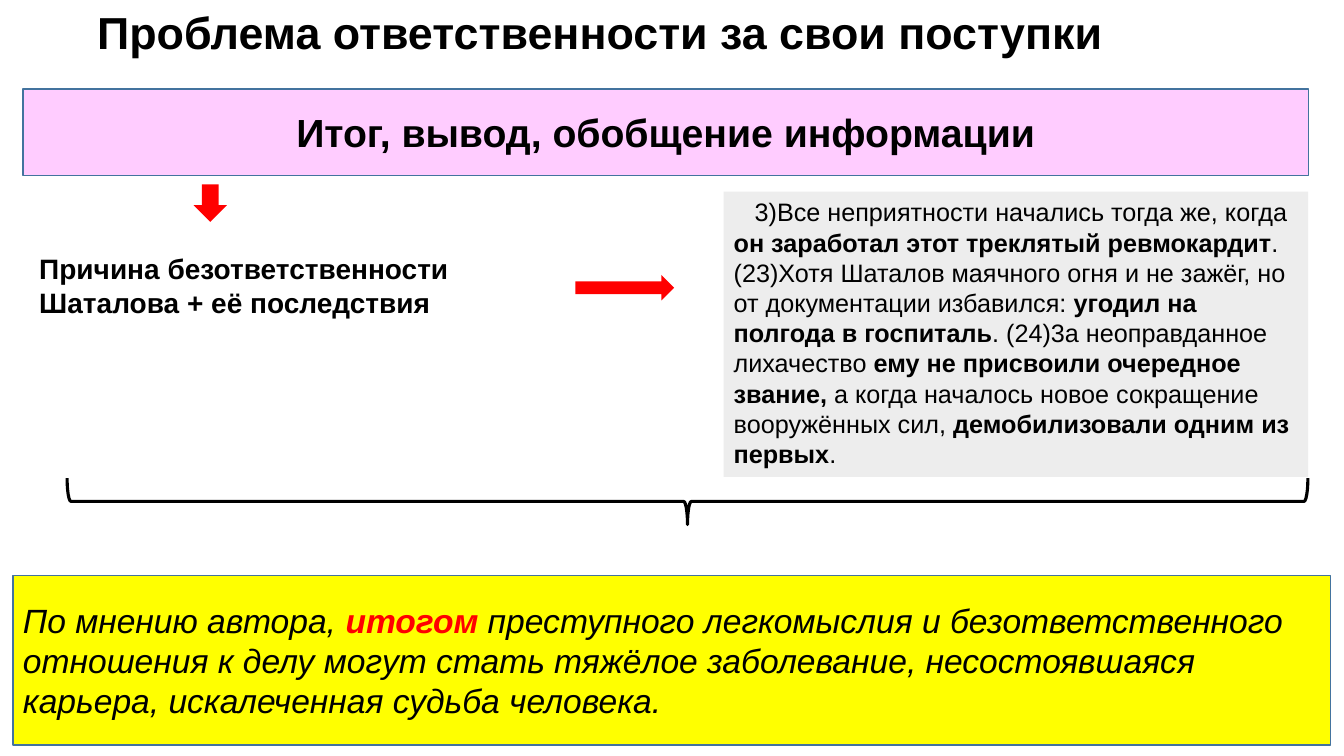
from pptx import Presentation
from pptx import util as u
from pptx.dml.color import RGBColor
from pptx.enum import shapes, text

BLACK = RGBColor(0x00, 0x00, 0x00)
RED = RGBColor(0xFF, 0x00, 0x00)
PINK = RGBColor(0xFF, 0xCC, 0xFF)
YELLOW = RGBColor(0xFF, 0xFF, 0x00)
GRAY = RGBColor(0xED, 0xED, 0xED)
BLUE = RGBColor(0x43, 0x73, 0x9E)
KIND = shapes.MSO_SHAPE
MIDDLE = text.MSO_ANCHOR.MIDDLE
TOP = text.MSO_ANCHOR.TOP
LEFT = text.PP_ALIGN.LEFT
CENTER = text.PP_ALIGN.CENTER


def add_figure(kind, box, fill=None, line=None, width=1):
    shape = slide.shapes.add_shape(kind, *map(u.Cm, box))
    shape.shadow.inherit = False
    if fill is None:
        shape.fill.background()
    else:
        shape.fill.solid()
        shape.fill.fore_color.rgb = fill
    if line is None:
        shape.line.fill.background()
    else:
        shape.line.color.rgb = line
        shape.line.width = u.Pt(width)
    return shape


def write(shape, runs, size, anchor=TOP, align=LEFT):
    frame = shape.text_frame
    frame.word_wrap = True
    frame.vertical_anchor = anchor
    paragraph = frame.paragraphs[0]
    paragraph.alignment = align
    for words, changes in runs:
        run = paragraph.add_run()
        run.text = words
        values = {"name": "Arial", "size": u.Pt(size), "bold": False, "italic": False}
        values.update(changes)
        run.font.color.rgb = values.pop("color", BLACK)
        for name, value in values.items():
            setattr(run.font, name, value)
    return paragraph


presentation = Presentation()
presentation.slide_width = u.Cm(33.87)
presentation.slide_height = u.Cm(19.05)
slide = presentation.slides.add_slide(presentation.slide_layouts[6])

bold = {"bold": True}
italic = {"italic": True}

title = slide.shapes.add_textbox(*map(u.Cm, (2.2, 0.08, 30.2, 1.42)))
write(title, [("Проблема ответственности за свои поступки", bold)], 32, MIDDLE)

heading = add_figure(KIND.RECTANGLE, (0.58, 2.24, 32.39, 2.18), PINK, BLUE)
write(heading, [("Итог, вывод, обобщение информации", bold)], 28, MIDDLE, CENTER)

add_figure(KIND.DOWN_ARROW, (4.88, 4.65, 0.84, 0.94), RED)

brace = add_figure(KIND.RIGHT_BRACE, (16.74, -3, 1.17, 31.27), line=BLACK, width=2.25)
brace.rotation = 90

conclusion = add_figure(KIND.RECTANGLE, (0.33, 14.5, 33.2, 4.27), YELLOW, BLUE)
write(conclusion, [
    ("По мнению автора, ", italic),
    ("итогом", {"italic": True, "bold": True, "color": RED}),
    (" преступного легкомыслия и безответственного отношения к делу могут стать "
     "тяжёлое заболевание, несостоявшаяся карьера, искалеченная судьба человека.", italic),
], 24, MIDDLE)

quote = add_figure(KIND.RECTANGLE, (18.24, 4.83, 14.73, 7.19), GRAY)
quote_paragraph = write(quote, [
    ("3)Все неприятности начались тогда же, когда ", {}),
    ("он заработал этот треклятый ревмокардит", bold),
    (".(23)Хотя Шаталов маячного огня и не зажёг, но от документации избавился: ", {}),
    ("угодил на полгода в госпиталь", bold),
    (". (24)3а неоправданное лихачество ", {}),
    ("ему не присвоили очередное звание,", bold),
    (" а когда началось новое сокращение вооружённых сил, ", {}),
    ("демобилизовали одним из первых", bold),
    (".", {}),
], 18)
quote_paragraph._p.get_or_add_pPr().set("indent", str(u.Cm(0.53)))

cause = slide.shapes.add_textbox(*map(u.Cm, (0.74, 6.22, 12.98, 1.96)))
write(cause, [("Причина безответственности Шаталова + её последствия", bold)], 20)

add_figure(KIND.RIGHT_ARROW, (14.5, 6.93, 2.49, 0.64), RED)

presentation.save("out.pptx")
